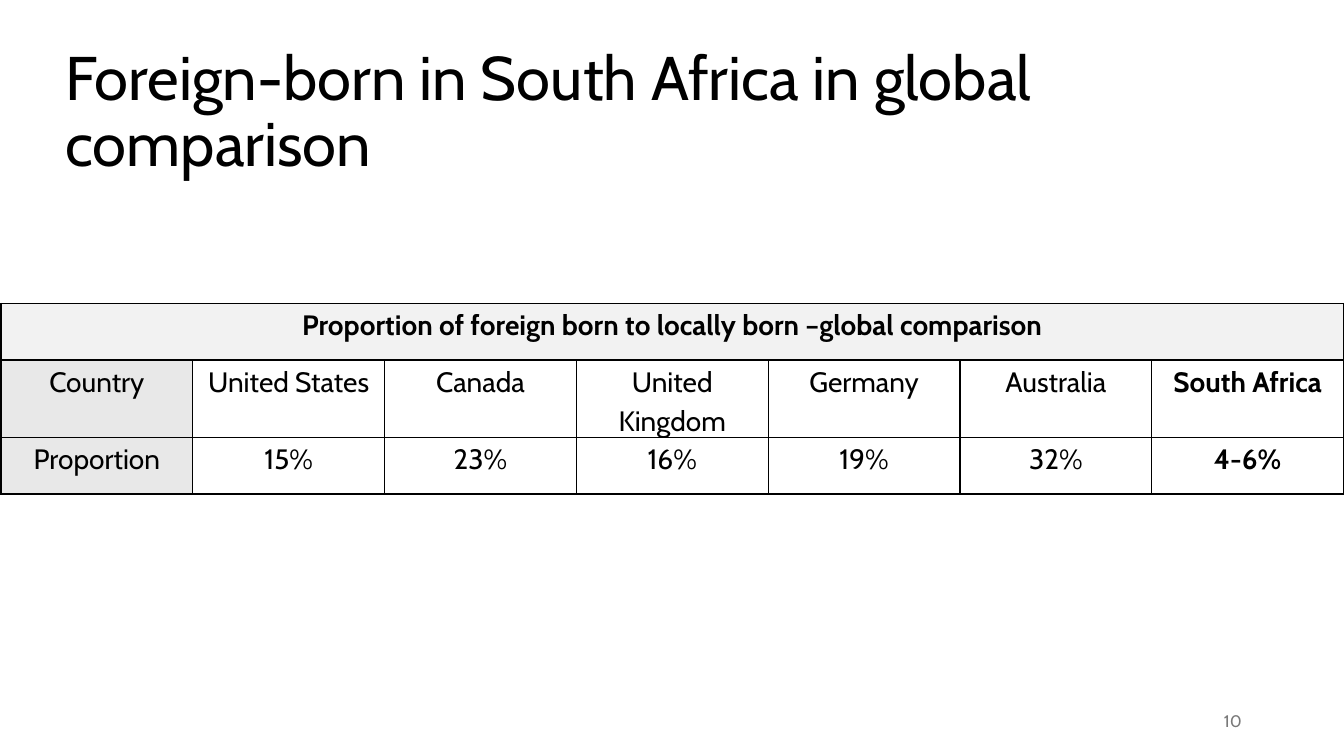
"""Build a slide comparing the foreign-born share of South Africa with other countries."""
from lxml import etree
from pptx import Presentation
from pptx.dml.color import RGBColor
from pptx.enum.text import MSO_ANCHOR, PP_ALIGN
from pptx.oxml.ns import qn
from pptx.util import Pt

MIDDLE = MSO_ANCHOR.MIDDLE
LEFT, CENTER, RIGHT = PP_ALIGN.LEFT, PP_ALIGN.CENTER, PP_ALIGN.RIGHT
BLACK, GRAY = "000000", "797979"
HEADING_FILL, LABEL_FILL = "F2F2F2", "E8E8E8"


def color(value):
    return RGBColor.from_string(value)


def write(frame, text, size, ink, bold, layout):
    para = frame.paragraphs[0]
    for name, value in layout.items():
        setattr(para, name, value)
    span = para.add_run()
    span.text = text
    for name, value in {"name": "Cabin", "size": Pt(size), "bold": bold}.items():
        setattr(span.font, name, value)
    span.font.color.rgb = color(ink)


deck = Presentation()
deck.slide_width, deck.slide_height = Pt(960), Pt(540)
page = deck.slides.add_slide(deck.slide_layouts[6])

text_boxes = [
    ((39.6, 28.8, 854.6, 104.4), "Foreign-born in South Africa in global comparison", 44, BLACK,
     {"alignment": LEFT, "line_spacing": 0.9}),
    ((678.2, 500.5, 216, 28.8), "10", 12, GRAY, {"alignment": RIGHT}),
]
for place, text, size, ink, layout in text_boxes:
    box = page.shapes.add_textbox(*map(Pt, place))
    box.text_frame.word_wrap = True
    box.text_frame.vertical_anchor = MIDDLE
    write(box.text_frame, text, size, ink, False, layout)

heading = "Proportion of foreign born to locally born –global comparison"
rows = [
    [heading] + [""] * 6,
    ["Country", "United States", "Canada", "United Kingdom", "Germany", "Australia", "South Africa"],
    ["Proportion", "15%", "23%", "16%", "19%", "32%", "4-6%"],
]
last_column = len(rows[0]) - 1
cell_layout = {"alignment": CENTER, "line_spacing": 1.15, "space_after": Pt(8)}
cell_margins = {"margin_left": Pt(5), "margin_right": Pt(5), "margin_top": 0, "margin_bottom": 0}

table = page.shapes.add_table(len(rows), len(rows[0]), Pt(0.7), Pt(216.7), Pt(959), Pt(121.5)).table
table.first_row = table.horz_banding = False
for column in table.columns:
    column.width = Pt(137)
for row in table.rows:
    row.height = Pt(40.5)
table.cell(0, 0).merge(table.cell(0, last_column))

for row_index, row_texts in enumerate(rows):
    for column_index, text in enumerate(row_texts):
        cell = table.cell(row_index, column_index)
        for name, value in cell_margins.items():
            setattr(cell, name, value)
        properties = cell._tc.get_or_add_tcPr()
        for edge in ("a:lnL", "a:lnR", "a:lnT", "a:lnB"):
            line = etree.SubElement(properties, qn(edge), w=str(Pt(1)))
            fill = etree.SubElement(line, qn("a:solidFill"))
            etree.SubElement(fill, qn("a:srgbClr"), val=BLACK)
        if row_index == 0 or column_index == 0:
            cell.fill.solid()
            cell.fill.fore_color.rgb = color(LABEL_FILL if row_index else HEADING_FILL)
        else:
            cell.fill.background()
        if text:
            bold = row_index == 0 or column_index == last_column
            write(cell.text_frame, text, 20, BLACK, bold, cell_layout)

deck.save("out.pptx")
